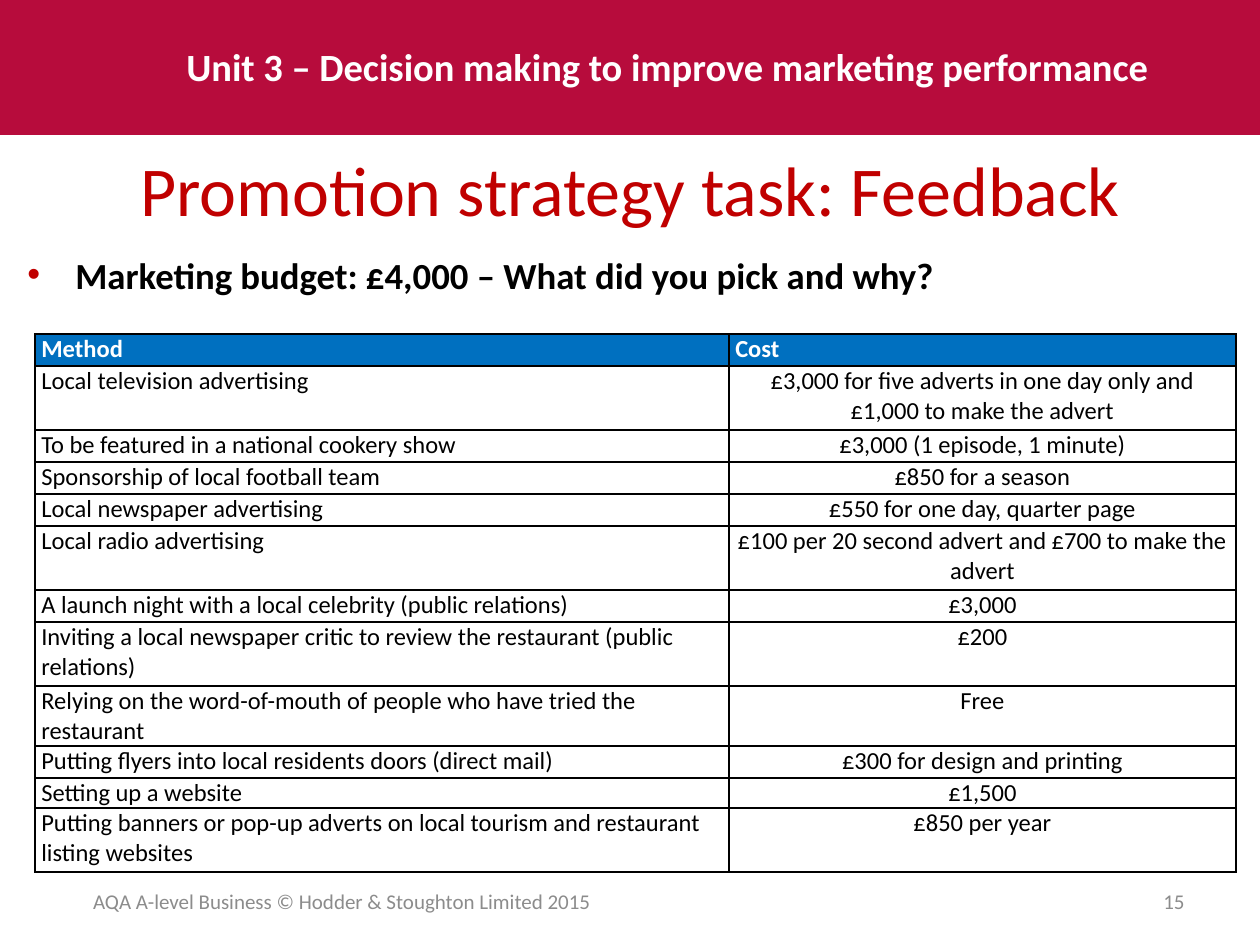
from lxml import etree
from pptx import Presentation
from pptx import util as u
from pptx.dml.color import RGBColor
from pptx.enum import shapes, text
from pptx.oxml.ns import qn

PX = 914400 // 126
CRIMSON, RED, BLUE = "B70C3C", "C00000", "0070C0"
BLACK, WHITE, GREY = "000000", "FFFFFF", "8C8C8C"
LEFT, CENTER, RIGHT = text.PP_ALIGN.LEFT, text.PP_ALIGN.CENTER, text.PP_ALIGN.RIGHT
TOP, MIDDLE = text.MSO_ANCHOR.TOP, text.MSO_ANCHOR.MIDDLE

# Content
UNIT = "Unit 3 – Decision making to improve marketing performance"
TITLE = "Promotion strategy task: Feedback"
QUESTION = "Marketing budget: £4,000 – What did you pick and why?"
FOOTER = "AQA A-level Business © Hodder & Stoughton Limited 2015"
PAGE = "15"
COLUMN_WIDTHS = (694, 507)
METHODS = [  # method, cost, row height
    ("Method", "Cost", 32),
    ("Local television advertising",
     "£3,000 for five adverts in one day only and £1,000 to make the advert", 64),
    ("To be featured in a national cookery show", "£3,000 (1 episode, 1 minute)", 32),
    ("Sponsorship of local football team", "£850 for a season", 32),
    ("Local newspaper advertising", "£550 for one day, quarter page", 32),
    ("Local radio advertising",
     "£100 per 20 second advert and £700 to make the advert", 64),
    ("A launch night with a local celebrity (public relations)", "£3,000", 32),
    ("Inviting a local newspaper critic to review the restaurant (public relations)",
     "£200", 64),
    ("Relying on the word-of-mouth of people who have tried the restaurant", "Free", 60),
    ("Putting flyers into local residents doors (direct mail)",
     "£300 for design and printing", 32),
    ("Setting up a website", "£1,500", 30),
    ("Putting banners or pop-up adverts on local tourism and restaurant listing websites",
     "£850 per year", 64),
]


def px(*lengths):
    return [length * PX for length in lengths]


def color(value):
    return RGBColor.from_string(value)


def write(frame, words, size, fill=BLACK, bold=False, align=LEFT, anchor=TOP):
    frame.word_wrap = True
    frame.vertical_anchor = anchor
    paragraph = frame.paragraphs[0]
    paragraph.alignment = align
    run = paragraph.add_run()
    run.text = words
    run.font.name, run.font.size, run.font.bold = "Calibri", u.Pt(size), bold
    run.font.color.rgb = color(fill)
    return paragraph


def add_text(slide, box, words, size, **style):
    shape = slide.shapes.add_textbox(*px(*box))
    return write(shape.text_frame, words, size, **style)


def add_bullet(paragraph, fill, indent):
    properties = paragraph._p.get_or_add_pPr()
    properties.set("marL", str(indent * PX))
    properties.set("indent", str(-indent * PX))
    bullet_color = etree.SubElement(properties, qn("a:buClr"))
    etree.SubElement(bullet_color, qn("a:srgbClr"), val=fill)
    etree.SubElement(properties, qn("a:buFont"), typeface="Arial")
    etree.SubElement(properties, qn("a:buChar"), char="•")


def add_borders(cell):
    properties = cell._tc.get_or_add_tcPr()
    for side in ("lnL", "lnR", "lnT", "lnB"):
        line = etree.SubElement(properties, qn(f"a:{side}"), w=str(u.Pt(1)))
        fill = etree.SubElement(line, qn("a:solidFill"))
        etree.SubElement(fill, qn("a:srgbClr"), val=BLACK)


def add_methods(slide, left, top):
    height = sum(row[2] for row in METHODS)
    frame = slide.shapes.add_table(
        len(METHODS), 2, *px(left, top, sum(COLUMN_WIDTHS), height))
    table = frame.table
    table.horz_banding = False
    for column, width in zip(table.columns, COLUMN_WIDTHS):
        column.width = width * PX
    for r, (method, cost, row_height) in enumerate(METHODS):
        table.rows[r].height = row_height * PX
        header = r == 0
        for c, words in enumerate((method, cost)):
            cell = table.cell(r, c)
            cell.margin_left = cell.margin_right = u.Inches(0.05)
            cell.margin_top = cell.margin_bottom = 0
            add_borders(cell)
            if header:
                cell.fill.solid()
                cell.fill.fore_color.rgb = color(BLUE)
            else:
                cell.fill.background()
            write(cell.text_frame, words, 14, fill=WHITE if header else BLACK,
                  bold=header, align=CENTER if c and not header else LEFT)
            cell.vertical_anchor = TOP


def main():
    presentation = Presentation()
    presentation.slide_width, presentation.slide_height = px(1260, 945)
    slide = presentation.slides.add_slide(presentation.slide_layouts[5])

    # Unit banner
    banner = slide.shapes.add_shape(shapes.MSO_SHAPE.RECTANGLE, *px(0, 0, 1260, 135))
    banner.shadow.inherit = False
    banner.fill.solid()
    banner.fill.fore_color.rgb = color(CRIMSON)
    banner.line.fill.background()
    add_text(slide, (174, 37, 1012, 59), UNIT, 22, fill=WHITE, bold=True)

    # Title
    title = slide.shapes.title
    title.left, title.top, title.width, title.height = px(0, 125, 1260, 128)
    write(title.text_frame, TITLE, 40, fill=RED, align=CENTER, anchor=MIDDLE)

    # Question
    question = add_text(slide, (15, 255, 1222, 694), QUESTION, 21, bold=True)
    add_bullet(question, RED, 48)
    question.line_spacing = 0.8
    question.space_after = u.Pt(6)

    # Methods and costs
    add_methods(slide, 35, 334)

    # Footer
    add_text(slide, (64, 876, 556, 50), FOOTER, 12, fill=GREY, align=CENTER, anchor=MIDDLE)
    add_text(slide, (903, 876, 294, 50), PAGE, 12, fill=GREY, align=RIGHT, anchor=MIDDLE)

    presentation.save("out.pptx")


if __name__ == "__main__":
    main()
